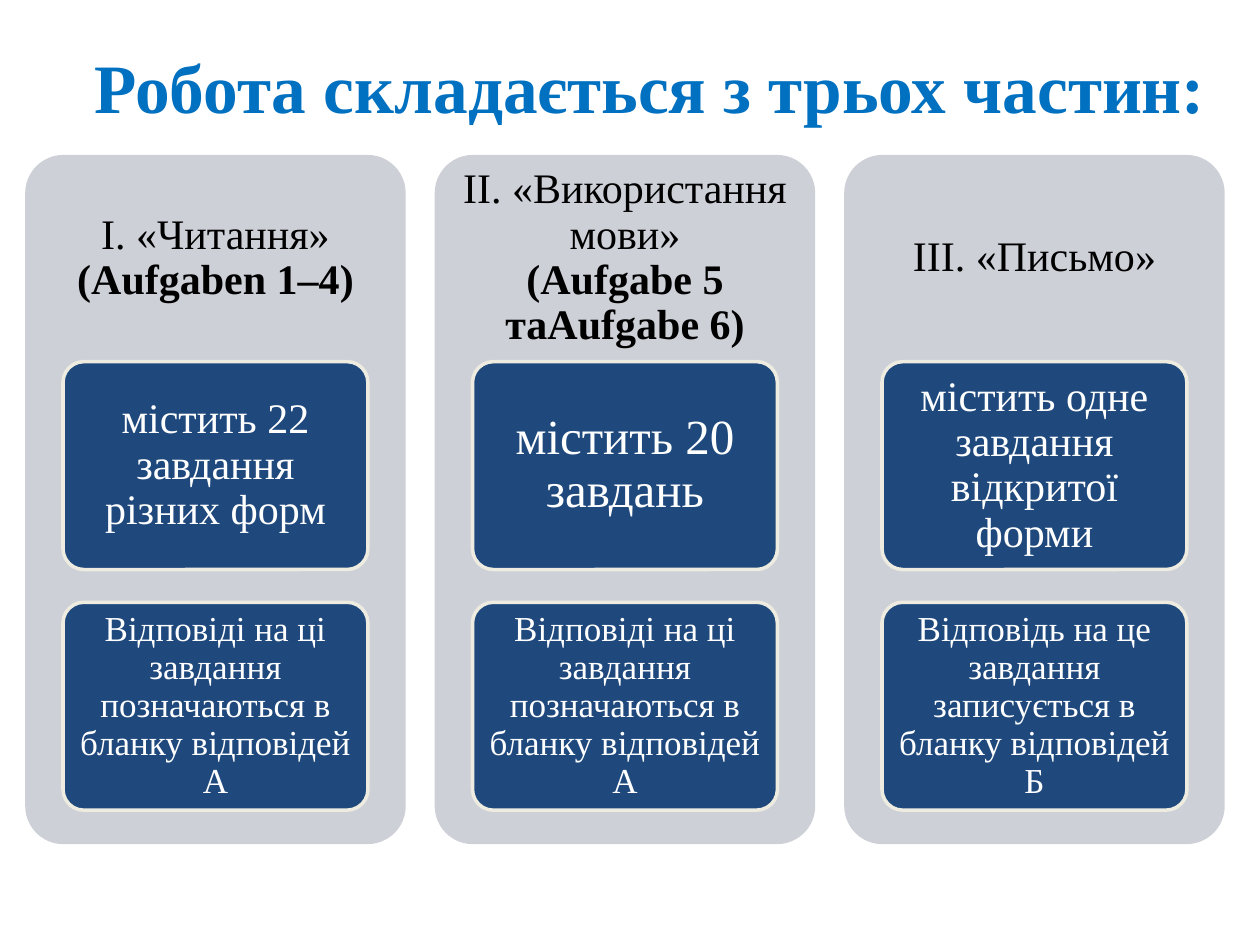
"""Build a slide that presents the three parts of a German language test."""
from typing import NamedTuple

from pptx import Presentation
from pptx.dml.color import RGBColor
from pptx.enum.shapes import MSO_SHAPE
from pptx.enum.text import MSO_ANCHOR, MSO_AUTO_SIZE, PP_ALIGN
from pptx.util import Inches, Pt

ROUNDED = MSO_SHAPE.ROUNDED_RECTANGLE
MIDDLE = MSO_ANCHOR.MIDDLE
NO_FIT = MSO_AUTO_SIZE.NONE
CENTER = PP_ALIGN.CENTER

FONT = "Times New Roman"
COLORS = {
    "title": "0070C0",
    "panel": "CDD0D7",
    "card": "1F497D",
    "border": "EEECE1",
    "heading": "000000",
    "card_text": "FFFFFF",
}

PANEL_LEFT, PANEL_TOP, PANEL_STEP = 0.2, 1.23, 3.25
PANEL_WIDTH, PANEL_HEIGHT, HEADING_HEIGHT = 3.02, 5.47, 1.64
CARD_INDENT, CARD_TOP, CARD_STEP = 0.3, 2.87, 1.91
CARD_WIDTH, CARD_HEIGHT = 2.42, 1.65


class Box(NamedTuple):
    left: float
    top: float
    width: float
    height: float

    def lengths(self) -> list:
        return [Inches(value) for value in self]


class Card(NamedTuple):
    wording: str
    size: float
    side_inset: float
    end_inset: float


class TestPart(NamedTuple):
    heading: str
    tasks: str
    breaks_line: bool
    cards: tuple[Card, ...]


def answer_card(wording: str) -> Card:
    return Card(wording, 20, 0.06, 0.04)


PARTS = (
    TestPart("І. «Читання» ", "(Aufgaben 1–4)", False, (
        Card("містить 22 завдання різних форм", 24, 0.07, 0.05),
        answer_card("Відповіді на ці завдання позначаються в бланку відповідей А"),
    )),
    TestPart("ІІ. «Використання мови»", "(Aufgabe 5 таAufgabe 6)", True, (
        Card("містить 20 завдань", 28, 0.08, 0.06),
        answer_card("Відповіді на ці завдання позначаються в бланку відповідей А"),
    )),
    TestPart("ІІІ. «Письмо»", "", False, (
        Card("містить одне завдання відкритої форми", 24, 0.07, 0.05),
        answer_card("Відповідь на це завдання записується в бланку відповідей Б"),
    )),
)


def color(role: str) -> RGBColor:
    return RGBColor.from_string(COLORS[role])


def prepare_frame(frame, side_inset: float, end_inset: float):
    """Format a text frame and return its centred first paragraph."""
    settings = {
        "word_wrap": True,
        "auto_size": NO_FIT,
        "vertical_anchor": MIDDLE,
        "margin_left": Inches(side_inset),
        "margin_right": Inches(side_inset),
        "margin_top": Inches(end_inset),
        "margin_bottom": Inches(end_inset),
    }
    for name, value in settings.items():
        setattr(frame, name, value)
    paragraph = frame.paragraphs[0]
    paragraph.alignment = CENTER
    return paragraph


def add_wording(paragraph, wording: str, size: float, role: str, bold: bool = False) -> None:
    run = paragraph.add_run()
    run.text = wording
    for name, value in {"name": FONT, "size": Pt(size), "bold": bold}.items():
        setattr(run.font, name, value)
    run.font.color.rgb = color(role)


def add_rounded(slide, box: Box, role: str):
    rounded = slide.shapes.add_shape(ROUNDED, *box.lengths())
    rounded.adjustments[0] = 0.1
    rounded.shadow.inherit = False
    rounded.fill.solid()
    rounded.fill.fore_color.rgb = color(role)
    return rounded


def add_heading(slide, part: TestPart, left: float) -> None:
    box = Box(left, PANEL_TOP, PANEL_WIDTH, HEADING_HEIGHT)
    heading = slide.shapes.add_textbox(*box.lengths())
    paragraph = prepare_frame(heading.text_frame, 0.1, 0.1)
    paragraph.line_spacing = 0.9
    add_wording(paragraph, part.heading, 24, "heading")
    if part.breaks_line:
        paragraph.add_line_break()
    if part.tasks:
        add_wording(paragraph, part.tasks, 24, "heading", bold=True)


def add_card(slide, card: Card, left: float, top: float) -> None:
    rounded = add_rounded(slide, Box(left, top, CARD_WIDTH, CARD_HEIGHT), "card")
    rounded.line.color.rgb = color("border")
    rounded.line.width = Pt(2)
    paragraph = prepare_frame(rounded.text_frame, card.side_inset, card.end_inset)
    paragraph.line_spacing = 0.9
    add_wording(paragraph, card.wording, card.size, "card_text")


def add_part(slide, part: TestPart, left: float) -> None:
    panel = add_rounded(slide, Box(left, PANEL_TOP, PANEL_WIDTH, PANEL_HEIGHT), "panel")
    panel.line.fill.background()
    add_heading(slide, part, left)
    for row, card in enumerate(part.cards):
        add_card(slide, card, left + CARD_INDENT, CARD_TOP + row * CARD_STEP)


def add_title(slide, wording: str) -> None:
    title = slide.shapes.title
    box = Box(0.51, 0.21, 9.3, 0.94)
    for name, value in zip(("left", "top", "width", "height"), box.lengths()):
        setattr(title, name, value)
    paragraph = prepare_frame(title.text_frame, 0.1, 0.05)
    add_wording(paragraph, wording, 39.6, "title", bold=True)


def main() -> None:
    presentation = Presentation()
    presentation.slide_width, presentation.slide_height = Inches(10), Inches(7.5)
    slide = presentation.slides.add_slide(presentation.slide_layouts[5])
    add_title(slide, "Робота складається з трьох частин:")
    for column, part in enumerate(PARTS):
        add_part(slide, part, PANEL_LEFT + column * PANEL_STEP)
    presentation.save("out.pptx")


if __name__ == "__main__":
    main()
